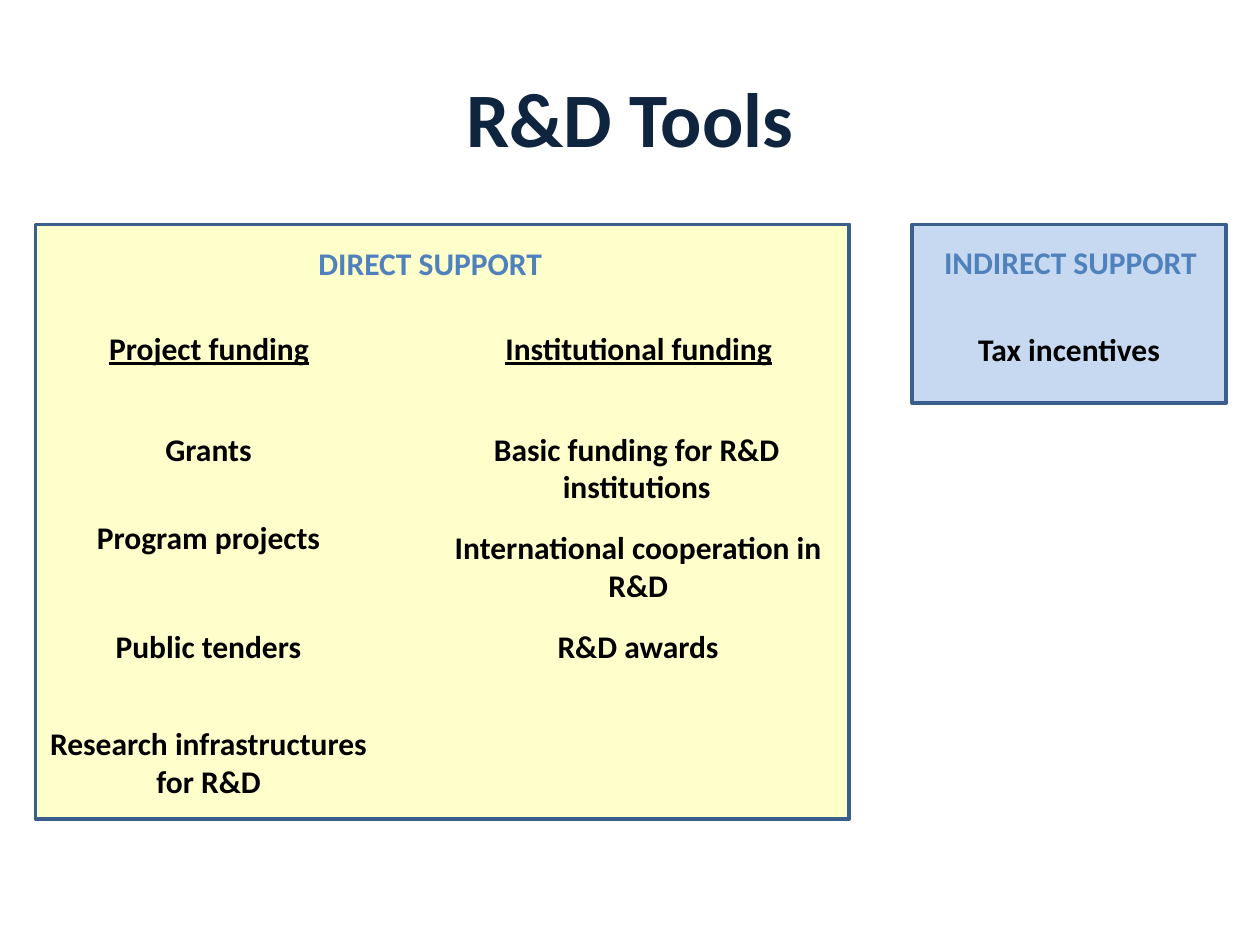
import pptx
import pptx.util
import pptx.dml.color
import pptx.enum.shapes
import pptx.enum.text

Pt = pptx.util.Pt


def color(value):
    return pptx.dml.color.RGBColor.from_string(value)


def write(sp, text, size=18, fill="000000", underline=None, wrap=True, anchor="TOP"):
    tf = sp.text_frame
    tf.word_wrap = wrap
    tf.vertical_anchor = getattr(pptx.enum.text.MSO_ANCHOR, anchor)
    p = tf.paragraphs[0]
    p.alignment = pptx.enum.text.PP_ALIGN.CENTER
    r = p.add_run()
    r.text = text
    r.font.name = "Calibri"
    r.font.size = Pt(size)
    r.font.bold = True
    r.font.underline = underline
    r.font.color.rgb = color(fill)


prs = pptx.Presentation()
prs.slide_width = Pt(720)
prs.slide_height = Pt(540)
s = prs.slides.add_slide(prs.slide_layouts[5])

title = s.shapes.title
title.left, title.top, title.width, title.height = Pt(36), Pt(21.6), Pt(648), Pt(90)
write(title, "R&D Tools", size=44, fill="0F243E", anchor="MIDDLE")

panels = [
    (20.2, 465.1, 339.8, "FFFFCC"),
    (521.3, 179.3, 102.2, "C6D9F1"),
]
for left, width, height, fill in panels:
    sp = s.shapes.add_shape(
        pptx.enum.shapes.MSO_SHAPE.RECTANGLE, Pt(left), Pt(128.2), Pt(width), Pt(height)
    )
    sp.shadow.inherit = False
    sp.fill.solid()
    sp.fill.fore_color.rgb = color(fill)
    sp.line.color.rgb = color("3A5F8C")
    sp.line.width = Pt(2)

heading = {"fill": "4F81BD", "wrap": False}
subheading = {"underline": True, "wrap": False}
single = {"wrap": False}
labels = [
    ("DIRECT SUPPORT", 174.2, 136.1, 143.3, 29, heading),
    ("INDIRECT SUPPORT", 531.4, 135.4, 160.6, 29, heading),
    ("Project funding", 54.7, 184.3, 129.6, 29, subheading),
    ("Institutional funding", 280.8, 184.3, 168.5, 29, subheading),
    ("Tax incentives", 521.3, 185, 179.3, 29, {}),
    ("Grants", 87.1, 241.9, 64.1, 29, single),
    ("Program projects", 47.5, 292.3, 143.3, 29, single),
    ("Public tenders", 58.3, 355, 121.7, 29, single),
    ("Research infrastructures for R&D", 20.2, 410.4, 198, 51, {}),
    ("Basic funding for R&D institutions", 249.8, 241.9, 228.2, 51, {}),
    ("International cooperation in R&D", 252, 298.1, 225.4, 51, {}),
    ("R&D awards", 311, 355, 107.3, 29, single),
]
for text, left, top, width, height, style in labels:
    sp = s.shapes.add_textbox(Pt(left), Pt(top), Pt(width), Pt(height))
    write(sp, text, **style)
    sp.text_frame.auto_size = pptx.enum.text.MSO_AUTO_SIZE.SHAPE_TO_FIT_TEXT

prs.save("out.pptx")
